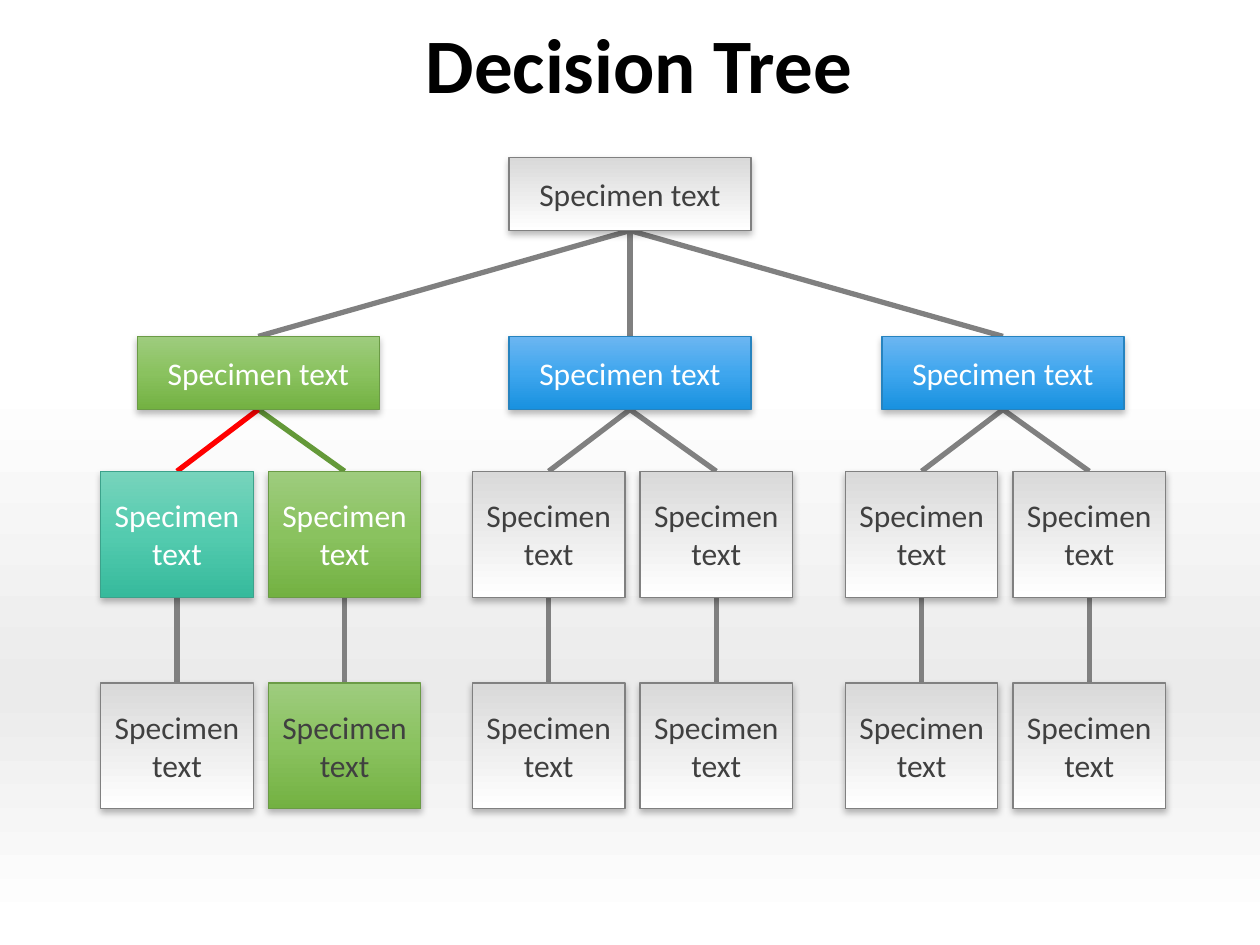
from copy import deepcopy
from lxml.etree import SubElement
from pptx import Presentation
from pptx.dml.color import RGBColor
from pptx.enum.shapes import MSO_CONNECTOR, MSO_SHAPE
from pptx.enum.text import MSO_ANCHOR, MSO_AUTO_SIZE, PP_ALIGN
from pptx.oxml.ns import qn
from pptx.util import Inches, Pt


def hue(code):
    return RGBColor.from_string(code)


def paint(fill, root, stops, angle):
    fill.gradient()
    fill.gradient_angle = angle
    marks = root.find(".//" + qn("a:gsLst"))
    while len(marks) < len(stops):
        marks.append(deepcopy(marks[0]))
    for mark, (place, code) in zip(fill.gradient_stops, stops):
        mark.position = place
        mark.color.rgb = hue(code)


deck = Presentation()
deck.slide_width = Inches(10)
deck.slide_height = Inches(7.5)
slide = deck.slides.add_slide(deck.slide_layouts[6])
tree = slide.shapes
paint(slide.background.fill, slide._element,
      [(0.02, "FFFFFF"), (0.27, "EBEBEB"), (0.6, "FFFFFF")], 90)

looks = {
    "gray": ([(0, "D9D9D9"), (1, "FFFFFF")], "808080"),
    "green": ([(0, "9ECC7E"), (0.5, "8AC25F"), (1, "73B142")], "6B9B46"),
    "teal": ([(0, "77D4BC"), (0.5, "54CBAF"), (1, "36BA9C")], "3CA28B"),
    "blue": ([(0, "6CB6F1"), (0.5, "3FA6EE"), (1, "1891DF")], "2683BF"),
}
dark, white, line = "404040", "FFFFFF", "808080"
wide, thin = (1.92, 0.58), (1.21, 1)

nodes = [("root", 4.04, 1.25, wide, "gray", dark)]
links = []
for col, mid in enumerate([2.05, 5, 7.96]):
    first = col == 0
    nodes.append((col, mid - 0.96, 2.67, wide, "green" if first else "blue", white))
    links.append(("root", col, line))
    for side, shift in enumerate([-1.25, 0.08]):
        look = ("teal", "green")[side] if first else "gray"
        last = "green" if first and side else "gray"
        ray = ("FF0000", "649939")[side] if first else line
        top, low = (col, side, "top"), (col, side, "low")
        nodes.append((top, mid + shift, 3.74, thin, look, white if first else dark))
        nodes.append((low, mid + shift, 5.42, thin, last, dark))
        links += [(col, top, ray), (top, low, line)]

boxes = {}
for key, left, top, size, look, ink in nodes:
    box = tree.add_shape(MSO_SHAPE.RECTANGLE, Inches(left), Inches(top),
                         Inches(size[0]), Inches(size[1]))
    stops, edge = looks[look]
    paint(box.fill, box._element, stops, 270)
    box.line.color.rgb = hue(edge)
    box.line.width = Pt(0.75)
    box.shadow.inherit = False
    glow = SubElement(box._element.spPr.find(qn("a:effectLst")), qn("a:outerShdw"),
                      blurRad=str(Pt(4)), dist=str(Pt(2)), dir="5400000", rotWithShape="0")
    shade = SubElement(glow, qn("a:srgbClr"), val="000000")
    SubElement(shade, qn("a:alpha"), val="28000")
    frame = box.text_frame
    frame.word_wrap = True
    frame.vertical_anchor = MSO_ANCHOR.MIDDLE
    para = frame.paragraphs[0]
    para.alignment = PP_ALIGN.CENTER
    run = para.add_run()
    run.text = "Specimen text"
    run.font.name = "Calibri"
    run.font.size = Pt(18)
    run.font.color.rgb = hue(ink)
    boxes[key] = box

for start, end, code in links:
    link = tree.add_connector(MSO_CONNECTOR.STRAIGHT, 0, 0, 0, 0)
    link.begin_connect(boxes[start], 2)
    link.end_connect(boxes[end], 0)
    link.line.color.rgb = hue(code)
    link.line.width = Pt(3)
    SubElement(link._element.spPr, qn("a:effectLst"))
    tree._spTree.insert(2, link._element)

title = tree.add_textbox(Inches(3.28), Inches(0.08), Inches(3.62), Inches(0.84))
frame = title.text_frame
frame.word_wrap = False
frame.auto_size = MSO_AUTO_SIZE.SHAPE_TO_FIT_TEXT
run = frame.paragraphs[0].add_run()
run.text = "Decision Tree"
run.font.name = "Calibri"
run.font.size = Pt(44)
run.font.bold = True
run.font.color.rgb = hue("000000")

deck.save("out.pptx")
